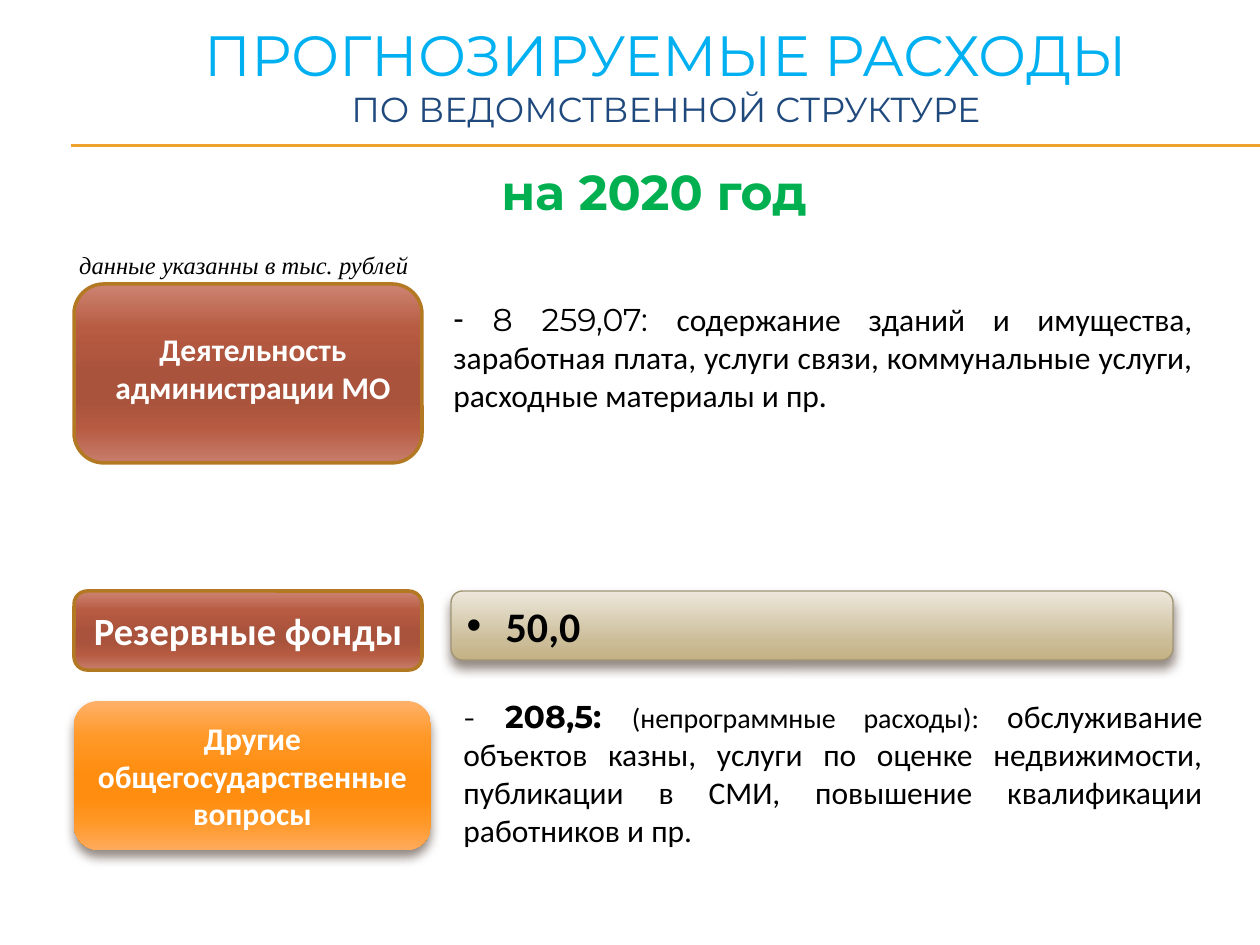
from dataclasses import dataclass

from lxml.etree import SubElement
from pptx import Presentation
from pptx.dml.color import RGBColor
from pptx.enum.shapes import MSO_CONNECTOR, MSO_SHAPE
from pptx.enum.text import MSO_ANCHOR as Anchor, PP_ALIGN as Align
from pptx.oxml.ns import qn
from pptx.util import Pt

PX = 914400 / 126


@dataclass(frozen=True)
class Theme:
    heading: str = "Montserrat"
    body: str = "Calibri"
    plain: str = "Lato"
    note: str = "Times New Roman"
    blue: str = "00B0F0"
    navy: str = "1F497D"
    green: str = "00B050"
    black: str = "000000"
    white: str = "FFFFFF"
    rule: str = "F0A22E"
    brown_line: str = "B27822"
    sand_line: str = "A19574"
    shadow: str = "4E3B30"
    brown: tuple = ((0, "CD8472"), (25, "B75B42"), (50, "AA533C"),
                    (65, "AA533C"), (80, "B65B42"), (100, "C77D6B"))
    orange: tuple = ((0, "FFB16A"), (25, "FF9826"), (50, "FF8D0F"),
                     (65, "FF8D0F"), (80, "FF9724"), (100, "FFAA5C"))
    sand: tuple = ((0, "EDE8DC"), (72, "CCBD99"), (100, "C4B284"))
    title_size: float = 32.4
    subtitle_size: float = 19.8
    year_size: int = 28
    amount_size: int = 24
    label_size: int = 22
    text_size: int = 18
    small_size: int = 16
    note_size: int = 14


THEME = Theme()


def emu(*lengths):
    return [round(length * PX) for length in lengths]


def add_xml(parent, tag, **attributes):
    return SubElement(parent, qn(tag), {key: str(value) for key, value in attributes.items()})


def write(shape, *runs, align=Align.LEFT, anchor=Anchor.TOP, bullet=None, indent=0,
          size=THEME.text_size, font=THEME.body, color=THEME.black, bold=False, italic=False):
    """Fill the shape with one paragraph; a run is a text or (text, format changes)."""
    frame = shape.text_frame
    frame.word_wrap = True
    frame.vertical_anchor = anchor
    paragraph = frame.paragraphs[0]
    paragraph.alignment = align
    if bullet:
        properties = paragraph._p.get_or_add_pPr()
        properties.set("marL", str(emu(indent)[0]))
        properties.set("indent", str(emu(-indent)[0]))
        add_xml(properties, "a:buFont", typeface="Arial")
        add_xml(properties, "a:buChar", char=bullet)
    base = dict(size=size, font=font, color=color, bold=bold, italic=italic)
    for item in runs:
        text, changes = (item, {}) if isinstance(item, str) else item
        if text == "\n":
            paragraph.add_line_break()
            continue
        style = base | changes
        run = paragraph.add_run()
        run.text = text
        run.font.size = Pt(style["size"])
        run.font.name = style["font"]
        run.font.bold = style["bold"]
        run.font.italic = style["italic"]
        run.font.color.rgb = RGBColor.from_string(style["color"])


def add_text(slide, box, *runs, **style):
    write(slide.shapes.add_textbox(*emu(*box)), *runs, **style)


def add_panel(slide, box, stops, line=None, width=2, shadow=False):
    """Add a rounded rectangle with a top-to-bottom gradient."""
    shape = slide.shapes.add_shape(MSO_SHAPE.ROUNDED_RECTANGLE, *emu(*box))
    shape.shadow.inherit = False
    shape.fill.gradient()
    gradient = shape._element.spPr.find(qn("a:gradFill"))
    for child in list(gradient):
        gradient.remove(child)
    stop_list = add_xml(gradient, "a:gsLst")
    for position, color in stops:
        stop = add_xml(stop_list, "a:gs", pos=position * 1000)
        add_xml(stop, "a:srgbClr", val=color)
    add_xml(gradient, "a:lin", ang=90 * 60000, scaled=0)
    if line:
        shape.line.color.rgb = RGBColor.from_string(line)
        shape.line.width = Pt(width)
    else:
        shape.line.fill.background()
    if shadow:
        effects = shape._element.spPr.find(qn("a:effectLst"))
        outer = add_xml(effects, "a:outerShdw", blurRad=Pt(6), dist=Pt(4),
                        dir=90 * 60000, rotWithShape=0)
        color = add_xml(outer, "a:srgbClr", val=THEME.shadow)
        add_xml(color, "a:alpha", val=60000)
    return shape


def add_header(slide, left, top, width):
    for offset in (129, 130):
        y = top + offset
        rule = slide.shapes.add_connector(MSO_CONNECTOR.STRAIGHT, *emu(left, y, left + width, y))
        rule.line.color.rgb = RGBColor.from_string(THEME.rule)
        rule.line.width = Pt(0.75)
        add_xml(rule._element.spPr, "a:effectLst")
    add_text(slide, (left + 44, top, 1101, 118),
             ("ПРОГНОЗИРУЕМЫЕ РАСХОДЫ", dict(size=THEME.title_size, color=THEME.blue)), "\n",
             ("ПО ВЕДОМСТВЕННОЙ СТРУКТУРЕ", dict(size=THEME.subtitle_size, color=THEME.navy)),
             font=THEME.heading, align=Align.CENTER, anchor=Anchor.MIDDLE)
    add_text(slide, (left + 52, top + 139, 1062, 72), "на 2020 год", size=THEME.year_size,
             font=THEME.heading, color=THEME.green, bold=True, align=Align.CENTER)
    add_text(slide, (left - 27, top + 228, 377, 43), "данные указанны в тыс. рублей",
             size=THEME.note_size, font=THEME.note, italic=True, align=Align.RIGHT)


def add_administration(slide, left, top):
    add_panel(slide, (left, top, 348, 179), THEME.brown, THEME.brown_line)
    add_text(slide, (left + 20, top + 40, 318, 89), "Деятельность администрации МО",
             color=THEME.white, bold=True, align=Align.CENTER)
    add_text(slide, (left + 367, top + 10, 764, 165),
             (" 8 259,07: ", dict(font=THEME.heading)),
             "содержание зданий и имущества, заработная плата, услуги связи, "
             "коммунальные услуги, расходные материалы и пр",
             (".", dict(font=THEME.plain)), bullet="-", align=Align.JUSTIFY)


def add_reserve(slide, left, top):
    add_panel(slide, (left, top, 348, 79), THEME.brown, THEME.brown_line)
    add_text(slide, (left, top + 10, 348, 59), "Резервные фонды", size=THEME.label_size,
             color=THEME.white, bold=True, align=Align.CENTER)
    bar = add_panel(slide, (left + 377, top, 722, 69), THEME.sand, THEME.sand_line, 0.79, True)
    write(bar, "50,0", size=THEME.amount_size, bold=True, bullet="•", indent=39,
          anchor=Anchor.MIDDLE)


def add_other_matters(slide, left, top):
    panel = add_panel(slide, (left, top, 357, 149), THEME.orange, shadow=True)
    write(panel, "Другие общегосударственные вопросы", color=THEME.white, bold=True,
          align=Align.CENTER, anchor=Anchor.MIDDLE)
    add_text(slide, (left + 377, top - 10, 764, 165),
             ("- ", dict(font=THEME.heading)),
             ("208,5: ", dict(font=THEME.heading, bold=True)),
             ("(непрограммные расходы): ", dict(size=THEME.small_size)),
             "обслуживание объектов казны, услуги по оценке недвижимости, "
             "публикации в СМИ, повышение квалификации работников и пр.",
             align=Align.JUSTIFY)


def main():
    presentation = Presentation()
    presentation.slide_width, presentation.slide_height = emu(1260, 945)
    slide = presentation.slides.add_slide(presentation.slide_layouts[6])
    add_header(slide, 71, 16, 1189)
    add_administration(slide, 74, 284)
    add_reserve(slide, 74, 591)
    add_other_matters(slide, 74, 701)
    presentation.save("out.pptx")


if __name__ == "__main__":
    main()
